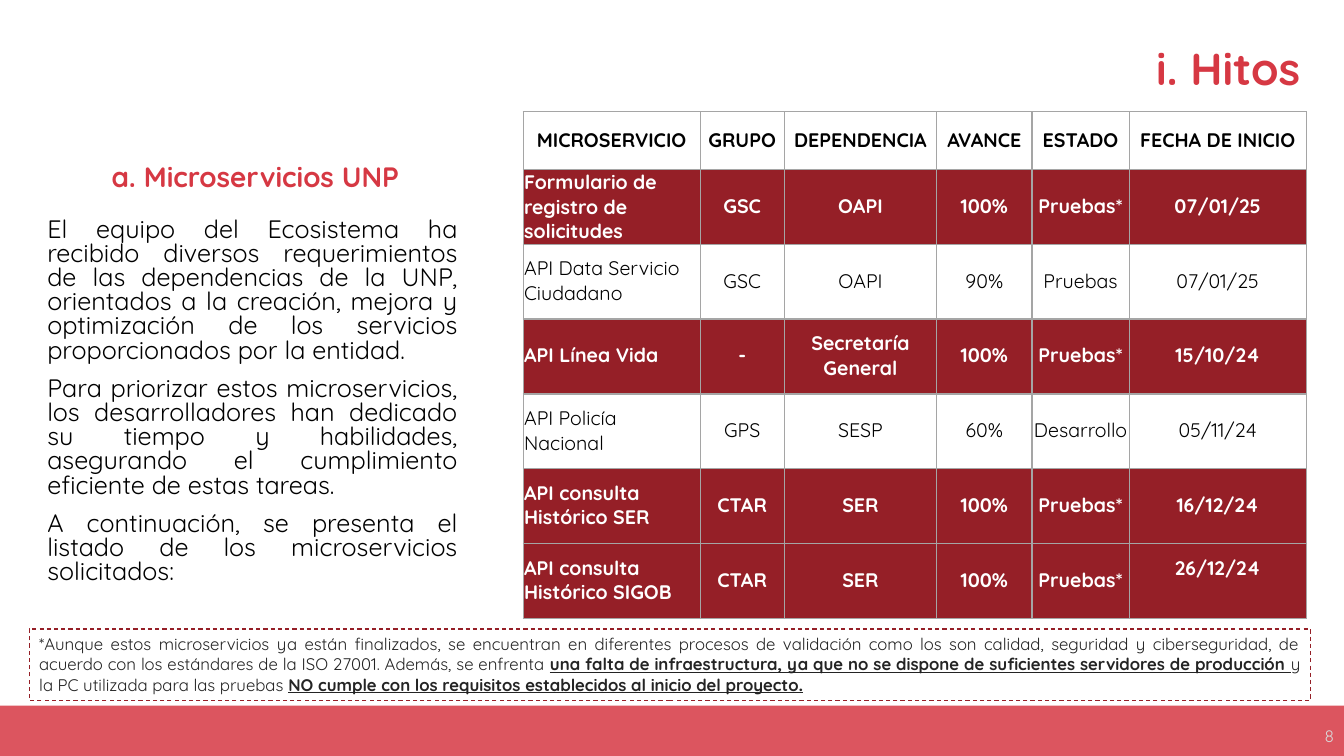
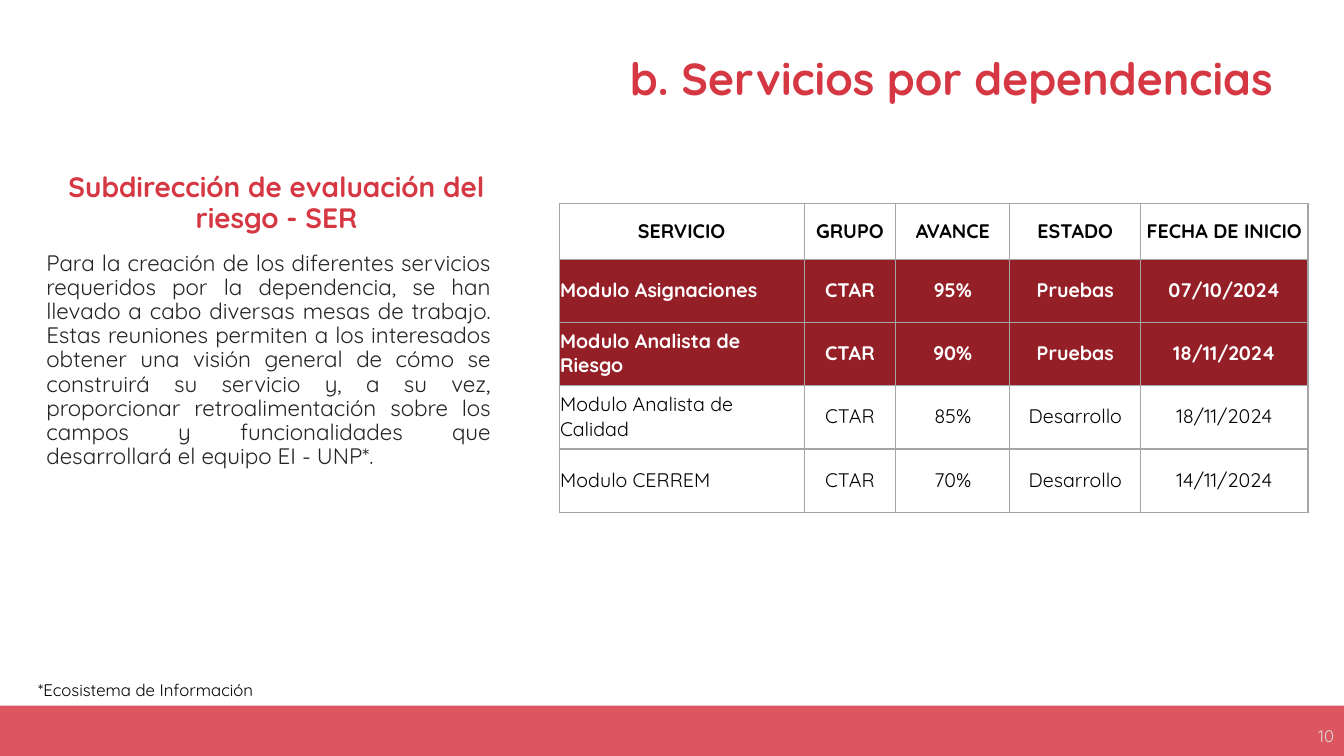
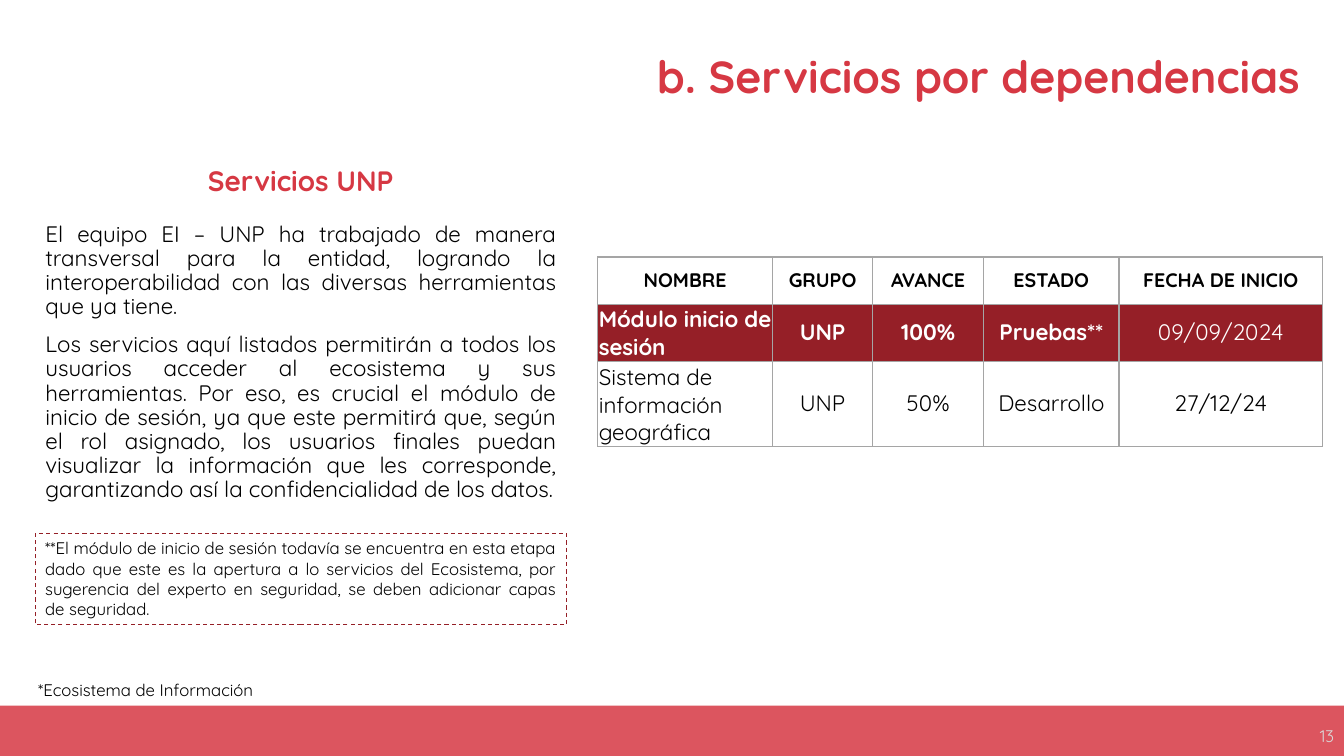
"""Build three slides on the progress of the UNP microservices and services."""
from lxml import etree
from pptx import Presentation
from pptx.dml.color import RGBColor
from pptx.enum.dml import MSO_LINE
from pptx.enum.shapes import MSO_SHAPE
from pptx.enum.text import MSO_ANCHOR as ANCHOR, PP_ALIGN as ALIGN
from pptx.oxml.ns import qn
from pptx.util import Pt

COLORS = {"red": "D63843", "wine": "951F27", "black": "000000", "ink": "242424",
          "white": "FFFFFF", "number": "D9D9D9", "grid": "A5A5A5"}
FONT = "Quicksand"
BORDERS = ("a:lnL", "a:lnR", "a:lnT", "a:lnB")
FOOTNOTE = "*Ecosistema de Información"
EMPHASIS = {"bold": True, "underline": True}

SLIDES = [
    {
        "number": "8",
        "heading": ("i. Hitos", (129.6, 20.9, 806.4, 51)),
        "title": ("a. Microservicios UNP", (10.8, 102.2, 343.4, 51)),
        "body": {
            "place": (26.6, 152.6, 307.4, 280.8), "size": 18, "spacing": 0.8, "color": "black",
            "texts": [
                "El equipo del Ecosistema ha recibido diversos requerimientos de las dependencias de la UNP, "
                "orientados a la creación, mejora y optimización de los servicios proporcionados por la entidad.",
                "Para priorizar estos microservicios, los desarrolladores han dedicado su tiempo y habilidades, "
                "asegurando el cumplimiento eficiente de estas tareas.",
                "A continuación, se presenta el listado de los microservicios solicitados:",
            ],
        },
        "table": {
            "corner": (373.7, 79.9), "size": 14,
            "columns": (126.5, 60, 109, 68, 69.5, 126.5), "heights": (41, *[53.5] * 6),
            "rows": [
                ("MICROSERVICIO", "GRUPO", "DEPENDENCIA", "AVANCE", "ESTADO", "FECHA DE INICIO"),
                ("Formulario de registro de solicitudes", "GSC", "OAPI", "100%", "Pruebas*", "07/01/25"),
                ("API Data Servicio Ciudadano", "GSC", "OAPI", "90%", "Pruebas", "07/01/25"),
                ("API Línea Vida", "-", "Secretaría General", "100%", "Pruebas*", "15/10/24"),
                ("API Policía Nacional", "GPS", "SESP", "60%", "Desarrollo", "05/11/24"),
                ("API consulta Histórico SER", "CTAR", "SER", "100%", "Pruebas*", "16/12/24"),
                ("API consulta Histórico SIGOB", "CTAR", "SER", "100%", "Pruebas*", "26/12/24"),
            ],
            "highlighted": {1, 3, 5, 6}, "raised": {(6, 5)},
        },
        "note": {
            "place": (20.9, 449.3, 915.1, 51), "color": "ink",
            "spans": [
                ("*Aunque estos microservicios ya están finalizados, se encuentran en diferentes procesos de "
                 "validación como los son calidad, seguridad y ciberseguridad, de acuerdo con los estándares "
                 "de la ISO 27001. Además, se enfrenta ", {}),
                ("una falta de infraestructura, ya que no se dispone de suficientes servidores de producción ",
                 EMPHASIS),
                ("y la PC utilizada para las pruebas ", {}),
                ("NO cumple con los requisitos establecidos al inicio del proyecto", EMPHASIS),
                (".", {**EMPHASIS, "name": "Karla"}),
            ],
        },
    },
    {
        "number": "10",
        "heading": ("b. Servicios por dependencias", (110.2, 27.4, 806.4, 51)),
        "title": ("Subdirección de evaluación del riesgo - SER", (25.9, 120.2, 343.4, 51)),
        "body": {
            "place": (25.9, 176.4, 331.9, 282.2), "size": 16, "spacing": 0.9, "color": "ink",
            "texts": [
                "Para la creación de los diferentes servicios requeridos por la dependencia, se han llevado a "
                "cabo diversas mesas de trabajo. Estas reuniones permiten a los interesados obtener una visión "
                "general de cómo se construirá su servicio y, a su vez, proporcionar retroalimentación sobre "
                "los campos y funcionalidades que desarrollará el equipo EI - UNP*.",
            ],
        },
        "table": {
            "corner": (399.4, 145.6), "size": 14,
            "columns": (175, 65.5, 81.5, 93.5, 119.5), "heights": (39.6, *[45.2] * 4),
            "rows": [
                ("SERVICIO", "GRUPO", "AVANCE", "ESTADO", "FECHA DE INICIO"),
                ("Modulo Asignaciones", "CTAR", "95%", "Pruebas", "07/10/2024"),
                ("Modulo Analista de Riesgo", "CTAR", "90%", "Pruebas", "18/11/2024"),
                ("Modulo Analista de Calidad", "CTAR", "85%", "Desarrollo", "18/11/2024"),
                ("Modulo CERREM", "CTAR", "70%", "Desarrollo", "14/11/2024"),
            ],
            "highlighted": {1, 2},
        },
        "footnote": FOOTNOTE,
    },
    {
        "number": "13",
        "heading": ("b. Servicios por dependencias", (129.6, 26.6, 806.4, 51)),
        "title": ("Servicios UNP", (43.2, 105.1, 343.4, 51)),
        "body": {
            "place": (25.2, 155.5, 379.4, 317.5), "size": 16, "spacing": 0.9, "color": "black",
            "texts": [
                "El equipo EI – UNP ha trabajado de manera transversal para la entidad, logrando la "
                "interoperabilidad con las diversas herramientas que ya tiene.",
                "Los servicios aquí listados permitirán a todos los usuarios acceder al ecosistema y sus "
                "herramientas. Por eso, es crucial el módulo de inicio de sesión, ya que este permitirá que, "
                "según el rol asignado, los usuarios finales puedan visualizar la información que les "
                "corresponde, garantizando así la confidencialidad de los datos.",
            ],
        },
        "table": {
            "corner": (427, 183.6), "size": 16,
            "columns": (124.8, 71.6, 79.2, 96.8, 145.4), "heights": (33.8, 41, 60),
            "rows": [
                ("NOMBRE", "GRUPO", "AVANCE", "ESTADO", "FECHA DE INICIO"),
                ("Módulo inicio de sesión", "UNP", "100%", "Pruebas**", "09/09/2024"),
                ("Sistema de información geográfica", "UNP", "50%", "Desarrollo", "27/12/24"),
            ],
            "highlighted": {1}, "light": {(1, 4)},
        },
        "note": {
            "place": (25.2, 380.9, 379.4, 65.5), "color": "black",
            "spans": [
                ("**El módulo de inicio de sesión todavía se encuentra en esta etapa dado que este es la "
                 "apertura a lo servicios del Ecosistema, por sugerencia del experto en seguridad, se deben "
                 "adicionar capas de seguridad.", {}),
            ],
        },
        "footnote": FOOTNOTE,
    },
]


def rgb(name):
    return RGBColor.from_string(COLORS[name])


def style(para, size, color, bold=False, align=ALIGN.LEFT, spacing=None):
    para.alignment = align
    if spacing:
        para.line_spacing = spacing
    font = para.font
    font.name, font.size, font.bold = FONT, Pt(size), bold
    font.color.rgb = rgb(color)


def move(shape, place):
    shape.left, shape.top, shape.width, shape.height = map(Pt, place)


def add_text(page, text, place, size, color, anchor=ANCHOR.TOP, **look):
    box = page.shapes.add_textbox(*map(Pt, place))
    frame = box.text_frame
    frame.word_wrap, frame.vertical_anchor = True, anchor
    para = frame.paragraphs[0]
    para.text = text
    style(para, size, color, **look)
    return box


def add_band(page, layout):
    band = page.shapes.add_shape(MSO_SHAPE.RECTANGLE, Pt(-12), Pt(504), Pt(985), Pt(50.4))
    band.shadow.inherit = False
    band.line.fill.background()
    band.fill.solid()
    band.fill.fore_color.rgb = rgb("red")
    color = next(band.element.spPr.iter(qn("a:srgbClr")))
    etree.SubElement(color, qn("a:alpha"), val="85000")
    layout.shapes.element.insert(2, band.element)


def fill_title(page, text, place):
    title = page.shapes.title
    move(title, place)
    title.text_frame.text = text
    style(title.text_frame.paragraphs[0], 20, "red", True, ALIGN.CENTER, 0.9)


def fill_body(page, body):
    holder = page.placeholders[1]
    move(holder, body["place"])
    frame = holder.text_frame
    for index, text in enumerate(body["texts"]):
        para = frame.add_paragraph() if index else frame.paragraphs[0]
        para.text = text
        para.space_before = Pt(10 if index else 0)
        props = para._p.get_or_add_pPr()
        props.set("marL", "0")
        props.set("indent", "0")
        etree.SubElement(props, qn("a:buNone"))
        style(para, body["size"], body["color"], align=ALIGN.JUSTIFY, spacing=body["spacing"])


def add_borders(cell):
    props = cell._tc.get_or_add_tcPr()
    for index, tag in enumerate(BORDERS):
        line = etree.Element(qn(tag), w=str(Pt(1)))
        paint = etree.SubElement(line, qn("a:solidFill"))
        etree.SubElement(paint, qn("a:srgbClr"), val=COLORS["grid"])
        props.insert(index, line)


def add_status_table(page, data):
    rows, columns, heights = data["rows"], data["columns"], data["heights"]
    place = (*data["corner"], sum(columns), sum(heights))
    table = page.shapes.add_table(len(rows), len(columns), *map(Pt, place)).table
    table.first_row = table.horz_banding = False
    for column, width in zip(table.columns, columns):
        column.width = Pt(width)
    for r, (row, height) in enumerate(zip(rows, heights)):
        table.rows[r].height = Pt(height)
        highlighted = r in data["highlighted"]
        for c, text in enumerate(row):
            cell = table.cell(r, c)
            cell.text = text
            cell.vertical_anchor = ANCHOR.MIDDLE
            cell.margin_left = cell.margin_right = cell.margin_top = Pt(0.7)
            cell.margin_bottom = Pt(19.5 if (r, c) in data.get("raised", ()) else 2)
            if highlighted:
                cell.fill.solid()
                cell.fill.fore_color.rgb = rgb("wine")
            else:
                cell.fill.background()
            add_borders(cell)
            bold = (r == 0 or highlighted) and (r, c) not in data.get("light", ())
            style(cell.text_frame.paragraphs[0], data["size"] if r else 14,
                  "white" if highlighted else "black", bold,
                  ALIGN.LEFT if r and c == 0 else ALIGN.CENTER)


def add_note(page, note):
    box = add_text(page, "", note["place"], 12, note["color"], align=ALIGN.JUSTIFY)
    box.line.color.rgb = rgb("wine")
    box.line.width = Pt(0.75)
    box.line.dash_style = MSO_LINE.DASH
    for text, look in note["spans"]:
        span = box.text_frame.paragraphs[0].add_run()
        span.text = text
        for key, value in look.items():
            setattr(span.font, key, value)


def main():
    deck = Presentation()
    deck.slide_width, deck.slide_height = Pt(960), Pt(540)
    layout = deck.slide_layouts[1]
    for index, content in enumerate(SLIDES):
        page = deck.slides.add_slide(layout)
        if index == 0:
            add_band(page, layout)
        fill_title(page, *content["title"])
        fill_body(page, content["body"])
        add_text(page, content["number"], (744, 511.2, 216, 28.8), 12, "number",
                 ANCHOR.MIDDLE, align=ALIGN.RIGHT)
        add_text(page, *content["heading"], 32, "red", ANCHOR.BOTTOM,
                 bold=True, align=ALIGN.RIGHT, spacing=0.9)
        add_status_table(page, content["table"])
        if "note" in content:
            add_note(page, content["note"])
        if "footnote" in content:
            add_text(page, content["footnote"], (20.2, 481.7, 201.6, 21.6), 12, "black")
    deck.save("out.pptx")


if __name__ == "__main__":
    main()
